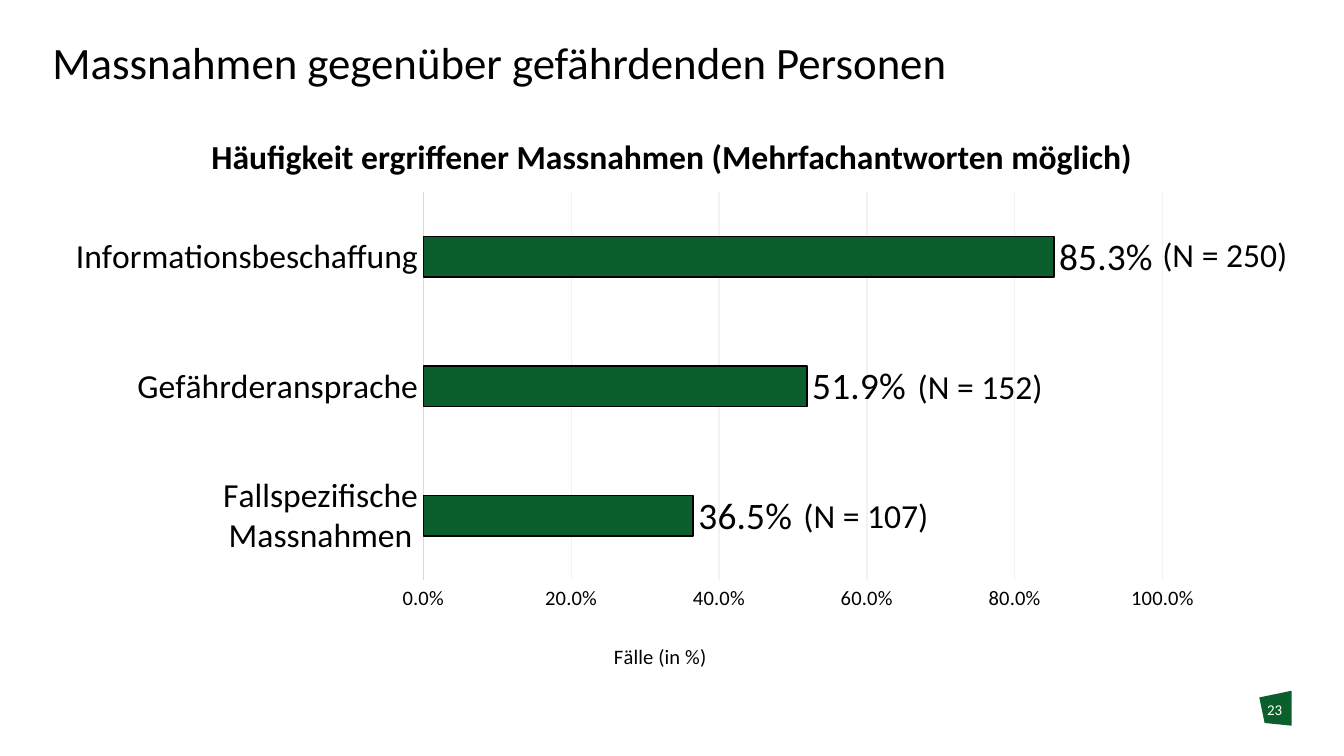
from dataclasses import dataclass

from lxml import etree
from pptx import Presentation
from pptx import util as u
from pptx.chart import data as chart_data
from pptx.dml.color import RGBColor
from pptx.enum import chart as chart_enum
from pptx.enum import text
from pptx.oxml import ns


@dataclass(frozen=True)
class Theme:
    font: str = "Calibri"
    green: RGBColor = RGBColor.from_string("0A5F2D")
    black: RGBColor = RGBColor.from_string("000000")
    white: RGBColor = RGBColor.from_string("FFFFFF")
    axis: RGBColor = RGBColor.from_string("D9D9D9")
    grid: RGBColor = RGBColor.from_string("F2F2F2")
    title: u.Pt = u.Pt(24)
    value: u.Pt = u.Pt(20)
    body: u.Pt = u.Pt(18)
    tick: u.Pt = u.Pt(11)
    number: u.Pt = u.Pt(8)
    line: u.Pt = u.Pt(0.75)


theme = Theme()
chart_width, chart_height = 9.22, 3.76


def add_text(box, words, size, color=theme.black, align=text.PP_ALIGN.LEFT,
             anchor=text.MSO_ANCHOR.TOP, inset=0.0, bold=False):
    shape = slide.shapes.add_textbox(*map(u.Inches, box))
    frame = shape.text_frame
    frame.word_wrap = True
    frame.vertical_anchor = anchor
    frame.margin_left = frame.margin_right = u.Inches(inset)
    frame.margin_top = frame.margin_bottom = u.Inches(inset / 2)
    paragraph = frame.paragraphs[0]
    paragraph.text = words
    paragraph.alignment = align
    font = paragraph.font
    font.name, font.size, font.bold = theme.font, size, bold
    font.color.rgb = color
    return shape


def set_layout(part, index, target=None, **inches):
    """Place a chart part, in inches from the chart's top left corner."""
    for old in part.findall(ns.qn("c:layout")):
        part.remove(old)
    layout = etree.Element(ns.qn("c:layout"))
    manual = etree.SubElement(layout, ns.qn("c:manualLayout"))
    values = {"layoutTarget": target} if target else {}
    values.update(xMode="edge", yMode="edge")
    for name, length in inches.items():
        values[name] = length / (chart_width if name in "xw" else chart_height)
    for name, value in values.items():
        etree.SubElement(manual, ns.qn(f"c:{name}")).set("val", str(value))
    part.insert(index, layout)


presentation = Presentation()
presentation.slide_width = u.Inches(10)
presentation.slide_height = u.Inches(10 * 9 / 16)
slide = presentation.slides.add_slide(presentation.slide_layouts[6])

# Page number on its green badge
builder = slide.shapes.build_freeform(u.Inches(9.37), u.Inches(5.19), scale=1.0)
corners = [(9.61, 5.14), (9.61, 5.4), (9.41, 5.38)]
builder.add_line_segments([(u.Inches(x), u.Inches(y)) for x, y in corners])
badge = builder.convert_to_shape()
badge.shadow.inherit = False
badge.fill.solid()
badge.fill.fore_color.rgb = theme.green
badge.line.fill.background()
add_text((9.37, 5.21, 0.23, 0.3), "23", theme.number, theme.white,
         text.PP_ALIGN.CENTER)

title = add_text((0.39, -0.01, 9.22, 0.67),
                 "Massnahmen gegenüber gefährdenden Personen",
                 theme.title, anchor=text.MSO_ANCHOR.BOTTOM)
title.text_frame.paragraphs[0].line_spacing = 0.9

# Bar chart of measures
measures = chart_data.CategoryChartData(number_format="0.0%")
measures.categories = ["Fallspezifische Massnahmen", "Gefährderansprache",
                       "Informationsbeschaffung"]
measures.add_series("Series 1", (0.365, 0.519, 0.853))
chart = slide.shapes.add_chart(
    chart_enum.XL_CHART_TYPE.BAR_CLUSTERED, u.Inches(0.38), u.Inches(1.28),
    u.Inches(chart_width), u.Inches(chart_height), measures).chart
chart.has_legend = False
chart.has_title = False
chart.font.name, chart.font.size = theme.font, theme.tick
chart.font.color.rgb = theme.black

plot = chart.plots[0]
plot.gap_width = 219
plot.vary_by_categories = False
bars = plot.series[0].format
bars.fill.solid()
bars.fill.fore_color.rgb = theme.green
bars.line.color.rgb = theme.black
bars.line.width = theme.line

labels = plot.series[0].data_labels
labels.show_value = True
labels.position = chart_enum.XL_LABEL_POSITION.OUTSIDE_END
labels.number_format = "0.0%"
labels.number_format_is_linked = False

category_axis, value_axis = chart.category_axis, chart.value_axis
for axis in (category_axis, value_axis):
    axis.major_tick_mark = chart_enum.XL_TICK_MARK.NONE
    axis.minor_tick_mark = chart_enum.XL_TICK_MARK.NONE
category_axis.format.line.color.rgb = theme.axis
category_axis.format.line.width = theme.line

value_axis.minimum_scale, value_axis.maximum_scale = 0, 1
value_axis.major_unit = 0.2
value_axis.tick_labels.number_format = "0.0%"
value_axis.tick_labels.number_format_is_linked = False
value_axis.format.line.fill.background()
value_axis.major_gridlines.format.line.color.rgb = theme.grid
value_axis.major_gridlines.format.line.width = theme.line

axis_title = value_axis.axis_title.text_frame.paragraphs[0]
axis_title.text = "Fälle (in %)"
axis_title.font.bold = False
for font, size in ((labels.font, theme.value),
                   (category_axis.tick_labels.font, theme.body),
                   (value_axis.tick_labels.font, theme.tick),
                   (axis_title.font, theme.tick)):
    font.name, font.size = theme.font, size
    font.color.rgb = theme.black

plot_area = chart.element.find(".//" + ns.qn("c:plotArea"))
set_layout(plot_area, 0, "inner", x=2.77, y=0.15, w=5.5, h=2.89)
set_layout(plot_area.find(".//" + ns.qn("c:title")), 1, x=4.16, y=3.47)

# Chart heading and case counts
heading = add_text((0.21, 1.05, 9.58, 0.23),
                   "Häufigkeit ergriffener Massnahmen (Mehrfachantworten möglich)",
                   theme.body, align=text.PP_ALIGN.CENTER,
                   anchor=text.MSO_ANCHOR.MIDDLE, bold=True)
heading.fill.solid()
heading.fill.fore_color.rgb = theme.white

for left, top, count in ((8.55, 1.69, 250), (6.73, 2.67, 152), (5.88, 3.63, 107)):
    add_text((left, top, 1.31, 0.4), f"(N = {count})", theme.body, inset=0.1)

presentation.save("out.pptx")
